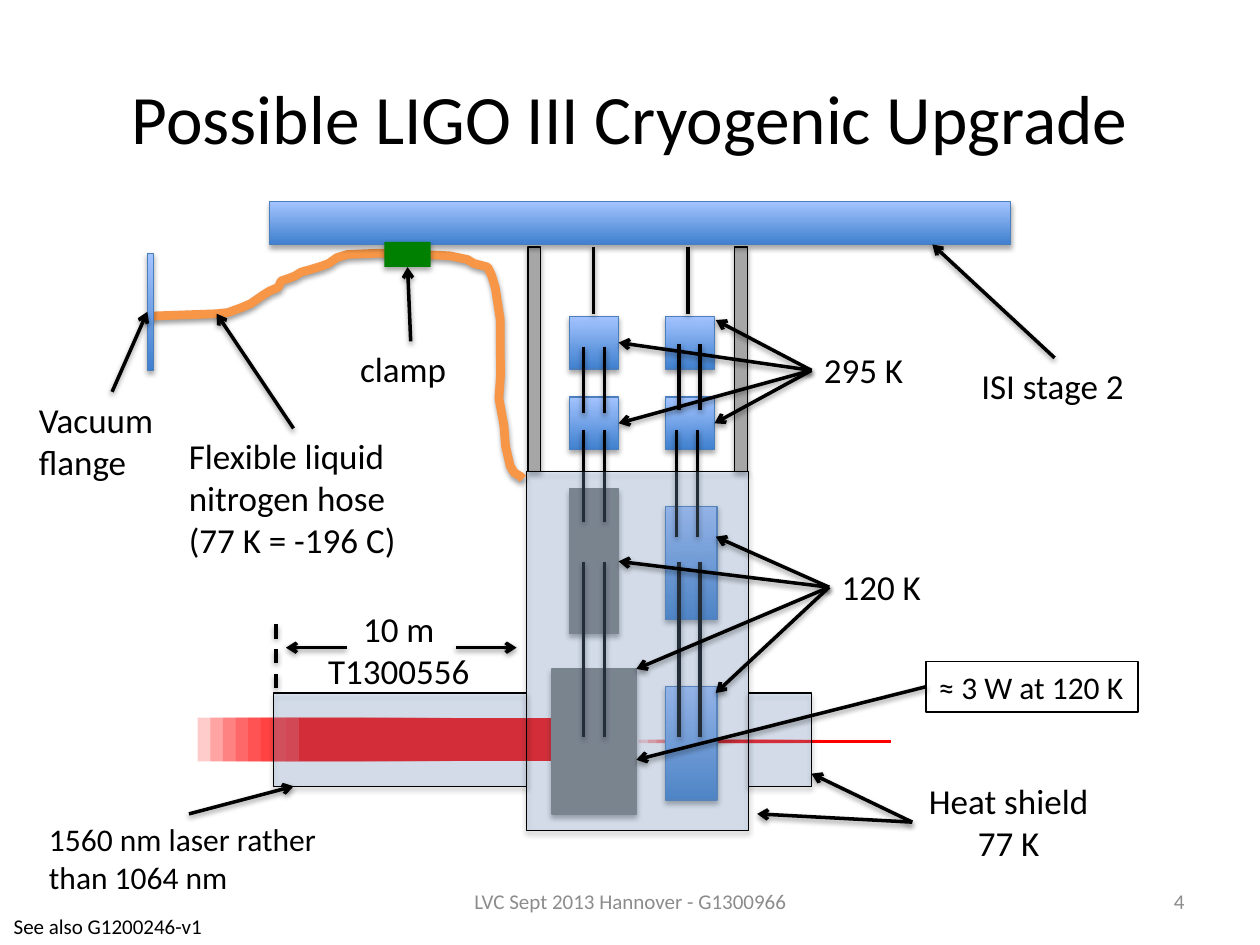
from dataclasses import dataclass
from typing import Optional

import pptx
import pptx.dml.color
import pptx.enum.dml
import pptx.enum.shapes
import pptx.enum.text
import pptx.oxml.ns
import pptx.util
from lxml import etree

Pt = pptx.util.Pt
qn = pptx.oxml.ns.qn
ALIGN = pptx.enum.text.PP_ALIGN
ANCHOR = pptx.enum.text.MSO_ANCHOR
RECTANGLE = pptx.enum.shapes.MSO_SHAPE.RECTANGLE
STRAIGHT = pptx.enum.shapes.MSO_CONNECTOR.STRAIGHT
TOP, LEFT, BOTTOM, RIGHT = range(4)

COLOURS = {
    "black": "000000", "footer": "8C8C8C", "laser": "FF0000", "mass": "808080",
    "post": "A6A6A6", "steel_low": "3F80CE", "steel_high": "A4C4FF",
    "steel_edge": "4B7EBC", "shield": "8EB4E3", "hose": "F79646", "clamp": "008000",
}


@dataclass
class Block:
    x: float
    y: float
    w: float
    h: float
    fill: str = "steel"
    edge: Optional[str] = "steel_edge"
    opacity: int = 100


@dataclass
class Label:
    text: str
    x: float
    y: float
    w: float
    h: float
    size: float = 20
    align: ALIGN = ALIGN.LEFT
    colour: str = "black"
    anchor: ANCHOR = ANCHOR.TOP


@dataclass
class Leader:
    """Arrow from a label's side to a point, or to the side of a block."""
    label: str
    side: int
    x: float = 0
    y: float = 0
    target: Optional[str] = None
    target_side: int = RIGHT


BLOCKS = {
    "right post": Block(419.8, 141.1, 7.2, 128.2, "post", "black"),
    "left post": Block(301.7, 141.1, 7.2, 128.2, "post", "black"),
    "test mass": Block(315.4, 382.3, 48.2, 82.8, "mass", "mass"),
    "reaction mass": Block(380.2, 392.4, 29.5, 64.8),
    "penultimate mass": Block(325.4, 279.4, 28.1, 82.8, "mass", "mass"),
    "reaction penultimate": Block(380.2, 289.4, 29.5, 64.8),
    "left lower": Block(325.4, 226.8, 28.1, 30.2),
    "left upper": Block(325.4, 180.7, 28.1, 30.2),
    "right lower": Block(380.2, 226.8, 28.1, 30.2),
    "right upper": Block(380.2, 180.7, 28.1, 30.2),
}
SHIELDS = {
    "chamber": Block(301, 269.3, 126.7, 205.2, "shield", "black", 25),
    "left tube": Block(156.2, 396, 144.7, 53.3, "shield", "black", 25),
    "right tube": Block(427.7, 396, 36, 53.3, "shield", "black", 25),
}
SUPPORTS = {
    "stage": Block(154.1, 115.2, 423.4, 24.5),
    "flange": Block(84.2, 144.7, 3.6, 67),
    "clamp": Block(219.6, 138.2, 26.6, 14.4, "clamp", None),
}
# x of the left wire, top, bottom
WIRE_PAIRS = [(333.4, 321.1, 421.2), (388.1, 321.1, 421.2), (333.4, 245.5, 298.1),
              (333.4, 198, 236.2), (388.1, 196.6, 234), (386.6, 245.5, 306.7)]
WIRE_GAP = 12
HOSE = [(84.2, 180.7), (123.8, 179.3), (130.3, 178.6), (138.2, 175.7), (143.3, 173.5),
        (150.5, 168.5), (154.1, 166.3), (159.1, 164.2), (160.6, 160.6), (164.9, 159.1),
        (168.5, 157.7), (172.1, 155.5), (177.1, 154.1), (184.3, 151.9), (187.9, 150.5),
        (192.6, 147.2), (198.7, 145.4), (216, 144.7), (241.2, 145.4), (257, 146.2),
        (267.1, 148.3), (270.7, 150.5), (278.6, 152.6), (280.8, 157), (283, 164.2),
        (285.8, 182.2), (286, 214.6), (285.1, 227.5), (288, 243.4), (288.9, 255),
        (291.6, 266.4), (293.8, 270), (297.4, 272.2), (298.8, 273.6)]
LABELS = {
    "title": Label("Possible LIGO III Cryogenic Upgrade", 36, 21.6, 648, 90, 39.6,
                   ALIGN.CENTER, anchor=ANCHOR.MIDDLE),
    "footer": Label("LVC Sept 2013 Hannover - G1300966", 246.2, 500.4, 228.2, 28.8, 12,
                    ALIGN.CENTER, "footer", ANCHOR.MIDDLE),
    "number": Label("4", 516.2, 500.4, 167.8, 28.8, 12, ALIGN.RIGHT, "footer", ANCHOR.MIDDLE),
    "cold": Label("120 K", 473.8, 319.7, 138.2, 31.7),
    "warm": Label("295 K", 463.7, 195.8, 138.2, 31.7),
    "heat shield": Label("Heat shield\n77 K", 521.3, 442.1, 110.2, 55.4, align=ALIGN.CENTER),
    "stage": Label("ISI stage 2", 553.7, 204.5, 97.9, 31.7),
    "flange": Label("Vacuum flange", 15.1, 223.9, 97.9, 55.4),
    "hose": Label("Flexible liquid nitrogen hose\n(77 K = -196 C)", 100.8, 244.8, 133.9, 79.9),
    "clamp": Label("clamp", 198.7, 195.1, 72, 31.7),
    "laser": Label("1560 nm laser rather than 1064 nm", 20.9, 465.1, 174.2, 51.1, 18),
    "see also": Label("See also G1200246-v1", 0.7, 518.4, 183.6, 21.6, 12),
    "distance": Label("10 m\nT1300556", 176.4, 343.4, 103, 55.4, align=ALIGN.CENTER),
}
POWER = Label("≈ 3 W at 120 K", 529.2, 378, 121, 28.8, 18)
LEADERS = [
    Leader("cold", LEFT, target="penultimate mass"), Leader("cold", LEFT, 363.6, 382.3),
    Leader("cold", LEFT, 409, 306.7), Leader("cold", LEFT, 409, 396),
    Leader("warm", LEFT, target="left upper"), Leader("warm", LEFT, target="left lower"),
    Leader("warm", LEFT, 409, 182.9), Leader("warm", LEFT, target="right lower"),
    Leader("heat shield", LEFT, 463.7, 442.1), Leader("heat shield", LEFT, 432.7, 465.1),
    Leader("stage", TOP, 532.8, 139.7), Leader("flange", TOP, target="flange", target_side=LEFT),
    Leader("hose", TOP, 123.8, 179.3), Leader("clamp", TOP, target="clamp", target_side=BOTTOM),
    Leader("laser", TOP, 167.8, 449.3), Leader("power", LEFT, 363.6, 434.2),
]


def rgb(name: str) -> pptx.dml.color.RGBColor:
    return pptx.dml.color.RGBColor.from_string(COLOURS[name])


def add_shadow(item, distance: float, opacity: int) -> None:
    properties = item._element.spPr
    effects = properties.find(qn("a:effectLst"))
    if effects is None:
        effects = etree.SubElement(properties, qn("a:effectLst"))
    outer = etree.SubElement(effects, qn("a:outerShdw"), blurRad=str(Pt(3.1)),
                             dist=str(Pt(distance)), dir="5400000", rotWithShape="0")
    tint = etree.SubElement(outer, qn("a:srgbClr"), val=COLOURS["black"])
    etree.SubElement(tint, qn("a:alpha"), val=str(opacity * 1000))


def set_opacity(owner, percent: int) -> None:
    tint = owner.find(".//" + qn("a:srgbClr"))
    etree.SubElement(tint, qn("a:alpha"), val=str(percent * 1000))


def draw_block(slide, block: Block):
    shape = slide.shapes.add_shape(RECTANGLE, Pt(block.x), Pt(block.y), Pt(block.w), Pt(block.h))
    shape.shadow.inherit = False
    if block.fill == "steel":
        shape.fill.gradient()
        shape.fill.gradient_angle = 90
        for stop, name in zip(shape.fill.gradient_stops, ("steel_low", "steel_high")):
            stop.color.rgb = rgb(name)
    else:
        shape.fill.solid()
        shape.fill.fore_color.rgb = rgb(block.fill)
    if block.opacity < 100:
        set_opacity(shape._element.spPr, block.opacity)
    if block.edge:
        shape.line.color.rgb = rgb(block.edge)
        shape.line.width = Pt(0.75)
    else:
        shape.line.fill.background()
    add_shadow(shape, 1.8, 35)
    return shape


def draw_line(slide, x1: float, y1: float, x2: float, y2: float, colour: str = "black",
              width: float = 2, opacity: int = 100, arrow: bool = False,
              dashed: bool = False, shadow: bool = True):
    line = slide.shapes.add_connector(STRAIGHT, Pt(x1), Pt(y1), Pt(x2), Pt(y2))
    line.line.color.rgb = rgb(colour)
    line.line.width = Pt(width)
    if opacity < 100:
        set_opacity(line.line._ln, opacity)
    if dashed:
        line.line.dash_style = pptx.enum.dml.MSO_LINE.DASH
    if arrow:
        etree.SubElement(line.line._ln, qn("a:tailEnd"), type="arrow")
    if shadow:
        add_shadow(line, 1.6, 38)
    else:
        etree.SubElement(line._element.spPr, qn("a:effectLst"))
    return line


def draw_beam(slide, start: float, step: float, length: float, y: float, width: float,
              core_start: float, core_end: float) -> None:
    """Solid core over eight shifted translucent lines that fade out at the end."""
    style = dict(colour="laser", width=width, shadow=False)
    for i in range(8):
        x = start + i * step
        draw_line(slide, x, y, x + length, y, opacity=20, **style)
    draw_line(slide, core_start, y, core_end, y, **style)


def draw_hose(slide) -> None:
    start, *bends = [(Pt(x), Pt(y)) for x, y in HOSE]
    outline = slide.shapes.build_freeform(*start)
    outline.add_line_segments(bends, close=False)
    hose = outline.convert_to_shape()
    hose.shadow.inherit = False
    hose.fill.background()
    hose.line.color.rgb = rgb("hose")
    hose.line.width = Pt(5)
    add_shadow(hose, 1.6, 38)


def write(shape, text: str, *, size: float, colour: str, align, anchor) -> None:
    frame = shape.text_frame
    frame.word_wrap = True
    frame.vertical_anchor = anchor
    frame.text = text
    for paragraph in frame.paragraphs:
        paragraph.alignment = align
        paragraph.font.name = "Calibri"
        paragraph.font.size = Pt(size)
        paragraph.font.color.rgb = rgb(colour)


def draw_label(slide, label: Label, boxed: bool = False):
    area = Pt(label.x), Pt(label.y), Pt(label.w), Pt(label.h)
    if boxed:
        shape = slide.shapes.add_shape(RECTANGLE, *area)
        shape.shadow.inherit = False
        shape.fill.background()
        shape.line.color.rgb = rgb("black")
        shape.line.width = Pt(1)
    else:
        shape = slide.shapes.add_textbox(*area)
    write(shape, label.text, size=label.size, colour=label.colour,
          align=label.align, anchor=label.anchor)
    return shape


def main() -> None:
    deck = pptx.Presentation()
    deck.slide_width, deck.slide_height = Pt(720), Pt(540)
    slide = deck.slides.add_slide(deck.slide_layouts[6])

    draw_beam(slide, 365, 5.15, 68, 423.7, 2, 406, 509)
    draw_beam(slide, 113, 7.2, 95, 422.6, 25, 170.6, 314.6)
    blocks = {name: draw_block(slide, block) for name, block in BLOCKS.items()}
    for x, top, bottom in WIRE_PAIRS:
        for wire_x in (x, x + WIRE_GAP):
            draw_line(slide, wire_x, top, wire_x, bottom)
    for shield in SHIELDS.values():
        draw_block(slide, shield)
    for x in (339.1, 393.1):
        draw_line(slide, x, 141.1, x, 179.3)
    draw_hose(slide)
    blocks.update({name: draw_block(slide, block) for name, block in SUPPORTS.items()})

    labels = {name: draw_label(slide, label) for name, label in LABELS.items()}
    labels["power"] = draw_label(slide, POWER, boxed=True)
    for leader in LEADERS:
        arrow = draw_line(slide, 0, 0, leader.x, leader.y, arrow=True)
        arrow.begin_connect(labels[leader.label], leader.side)
        if leader.target:
            arrow.end_connect(blocks[leader.target], leader.target_side)

    draw_line(slide, 157.7, 393.1, 157.7, 351.4, dashed=True)
    for start, end in ((260.6, 295.2), (198, 163.4)):
        draw_line(slide, start, 370.1, end, 370.1, arrow=True)
    deck.save("out.pptx")


if __name__ == "__main__":
    main()
